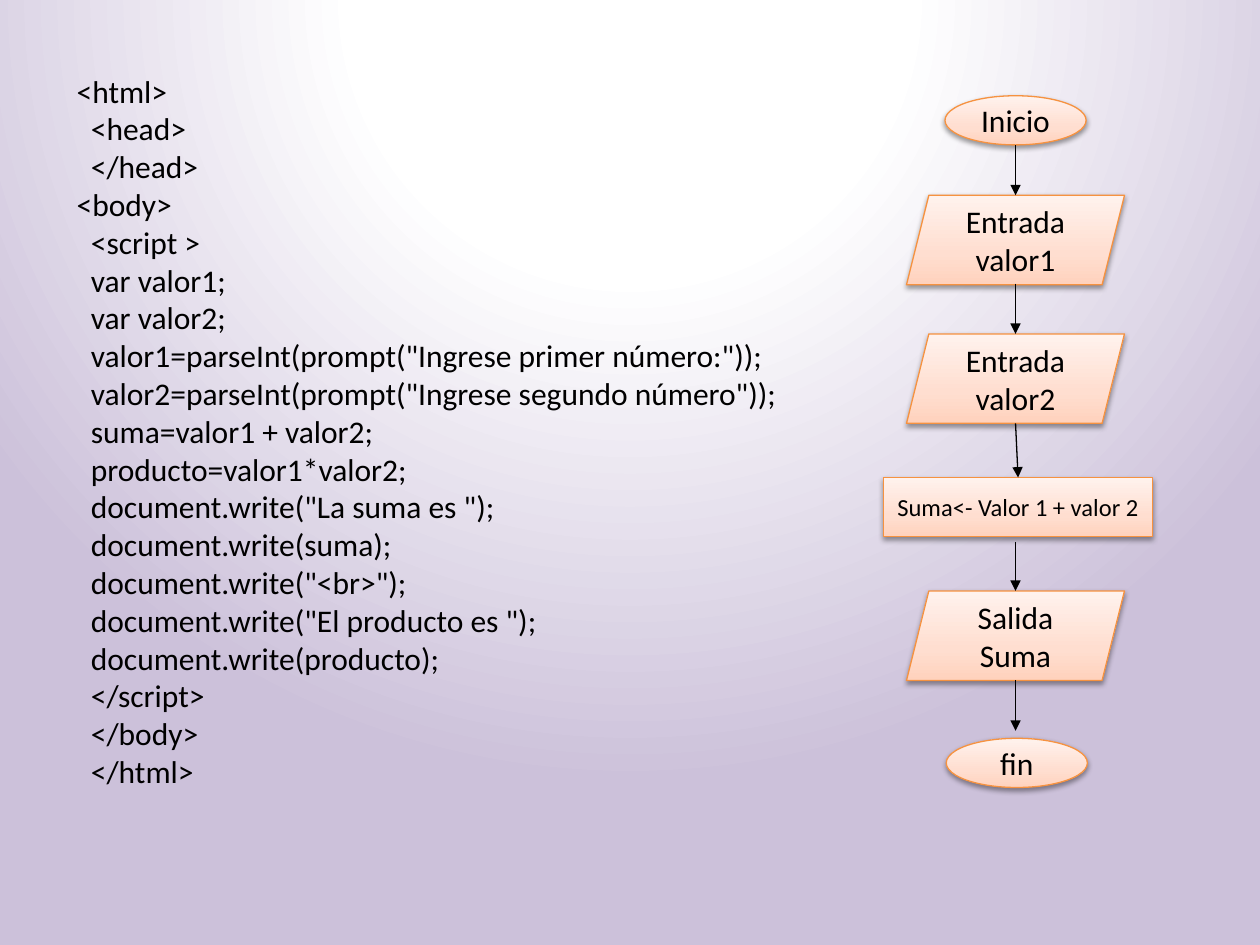
from typing import NamedTuple

from lxml.etree import SubElement as Sub
from pptx import Presentation
from pptx.dml.color import RGBColor
from pptx.enum.shapes import MSO_CONNECTOR as Link, MSO_SHAPE as Form
from pptx.enum.text import MSO_ANCHOR as Anchor, MSO_AUTO_SIZE as Fit, PP_ALIGN as Align
from pptx.oxml import parse_xml
from pptx.oxml.ns import nsdecls, qn
from pptx.util import Inches, Pt

BLACK = RGBColor(0x00, 0x00, 0x00)
WHITE = RGBColor(0xFF, 0xFF, 0xFF)
LILAC = RGBColor(0xCC, 0xC1, 0xDA)
EDGE = RGBColor(0xF6, 0x92, 0x40)
PEACH = RGBColor(0xFF, 0xD2, 0xBD)
CREAM = RGBColor(0xFF, 0xDE, 0xD0)
PALE = RGBColor(0xFF, 0xF2, 0xED)

FONT = "Calibri"
COLS, ROWS = 100, 75
WIDTH, HEIGHT = Inches(10), Inches(7.5)
AXIS = 80.6

CODE = """<html>
  <head>
  </head>
<body>
  <script >
  var valor1;
  var valor2;
  valor1=parseInt(prompt("Ingrese primer número:"));
  valor2=parseInt(prompt("Ingrese segundo número"));
  suma=valor1 + valor2;
  producto=valor1*valor2;
  document.write("La suma es ");
  document.write(suma);
  document.write("<br>");
  document.write("El producto es ");
  document.write(producto);
  </script>
  </body>
  </html>"""


class Kind(NamedTuple):
    form: Form
    wide: float
    high: float
    size: int


class Step(NamedTuple):
    kind: Kind
    top: float
    text: str
    mid: float = AXIS


class Arrow(NamedTuple):
    start: float
    stop: float


END = Kind(Form.OVAL, 11.2, 3.9, 18)
DATA = Kind(Form.PARALLELOGRAM, 17.3, 7.1, 18)
TASK = Kind(Form.RECTANGLE, 21.3, 4.7, 14)

SUM = Step(TASK, 37.9, "Suma<- Valor 1 + valor 2", 80.8)
STEPS = [
    Step(END, 7.6, "Inicio"),
    Step(DATA, 15.5, "Entrada\nvalor1"),
    Step(DATA, 26.5, "Entrada\nvalor2"),
    SUM,
    Step(DATA, 46.9, "Salida\nSuma"),
    Step(END, 58.6, "fin", 80.7),
]
ARROWS = [
    Arrow(11.5, 15.5),
    Arrow(22.5, 26.5),
    Arrow(33.6, SUM.top),
    Arrow(43, 46.9),
    Arrow(54, 58),
]


def col(n: float) -> int:
    return round(WIDTH * n / COLS)


def row(n: float) -> int:
    return round(HEIGHT * n / ROWS)


def blend(stops: list[tuple[int, RGBColor]], shade: str):
    marks = "".join(
        f'<a:gs pos="{pos * 1000}"><a:srgbClr val="{hue}"/></a:gs>' for pos, hue in stops
    )
    return parse_xml(
        f'<a:gradFill {nsdecls("a")} rotWithShape="1"><a:gsLst>{marks}</a:gsLst>{shade}</a:gradFill>'
    )


def paint(slide) -> None:
    slide.background.fill.solid()
    fill = slide.element.find(".//" + qn("p:bgPr"))
    shade = (
        '<a:path path="circle">'
        '<a:fillToRect l="50000" t="-80000" r="50000" b="180000"/></a:path>'
    )
    fill.replace(fill[0], blend([(0, WHITE), (35, WHITE), (100, LILAC)], shade))


def write(frame, text: str, size: int, align: Align) -> None:
    frame.word_wrap = True
    frame.text = text
    for para in frame.paragraphs:
        para.alignment = align
        para.font.name = FONT
        para.font.size = Pt(size)
        para.font.color.rgb = BLACK


def shadow(shape) -> None:
    shape.shadow.inherit = False
    glow = shape.element.spPr.find(qn("a:effectLst"))
    outer = Sub(glow, qn("a:outerShdw"), blurRad=str(Pt(3.1)), dist=str(Pt(1.6)),
                dir="5400000", rotWithShape="0")
    hue = Sub(outer, qn("a:srgbClr"), val=str(BLACK))
    Sub(hue, qn("a:alpha"), val="38000")


def draw(slide, step: Step):
    kind = step.kind
    shape = slide.shapes.add_shape(
        kind.form, col(step.mid - kind.wide / 2), row(step.top), col(kind.wide), row(kind.high)
    )
    shape.line.color.rgb = EDGE
    shape.line.width = Pt(0.75)
    fill = blend([(0, PEACH), (35, CREAM), (100, PALE)], '<a:lin ang="16200000" scaled="1"/>')
    shape.element.spPr.find(qn("a:prstGeom")).addnext(fill)
    shadow(shape)
    shape.text_frame.vertical_anchor = Anchor.MIDDLE
    write(shape.text_frame, step.text, kind.size, Align.CENTER)
    return shape


def join(slide, arrow: Arrow):
    line = slide.shapes.add_connector(
        Link.STRAIGHT, col(AXIS), row(arrow.start), col(AXIS), row(arrow.stop)
    )
    line.line.color.rgb = BLACK
    line.line.width = Pt(0.75)
    Sub(line.line._get_or_add_ln(), qn("a:tailEnd"), type="triangle")
    Sub(line.element.spPr, qn("a:effectLst"))
    return line


def main() -> None:
    deck = Presentation()
    deck.slide_width, deck.slide_height = WIDTH, HEIGHT
    slide = deck.slides.add_slide(deck.slide_layouts[6])
    paint(slide)

    box = slide.shapes.add_textbox(col(5.1), row(5.2), col(69.9), row(58.6))
    write(box.text_frame, CODE, 18, Align.LEFT)
    box.text_frame.auto_size = Fit.SHAPE_TO_FIT_TEXT

    shapes = {step: draw(slide, step) for step in STEPS}
    for arrow in ARROWS:
        line = join(slide, arrow)
        if arrow.stop == SUM.top:
            line.end_connect(shapes[SUM], 0)

    deck.save("out.pptx")


if __name__ == "__main__":
    main()
